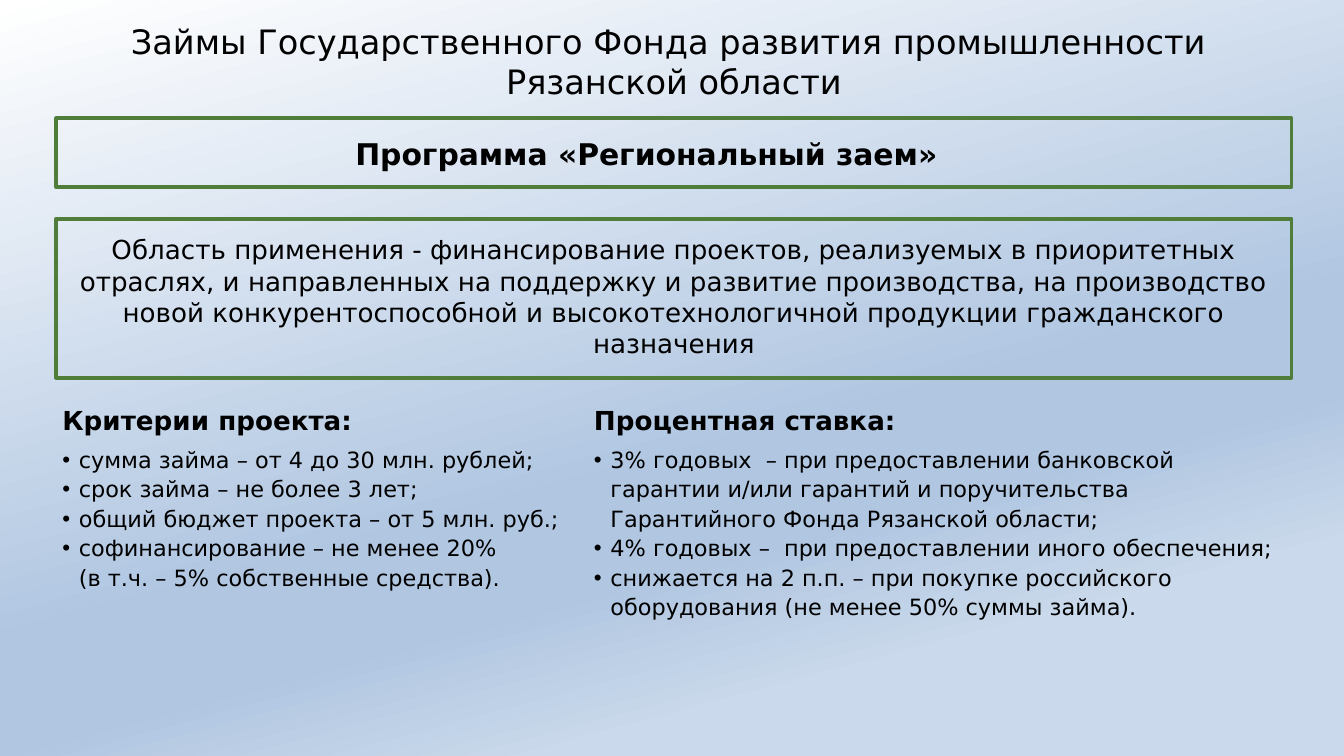
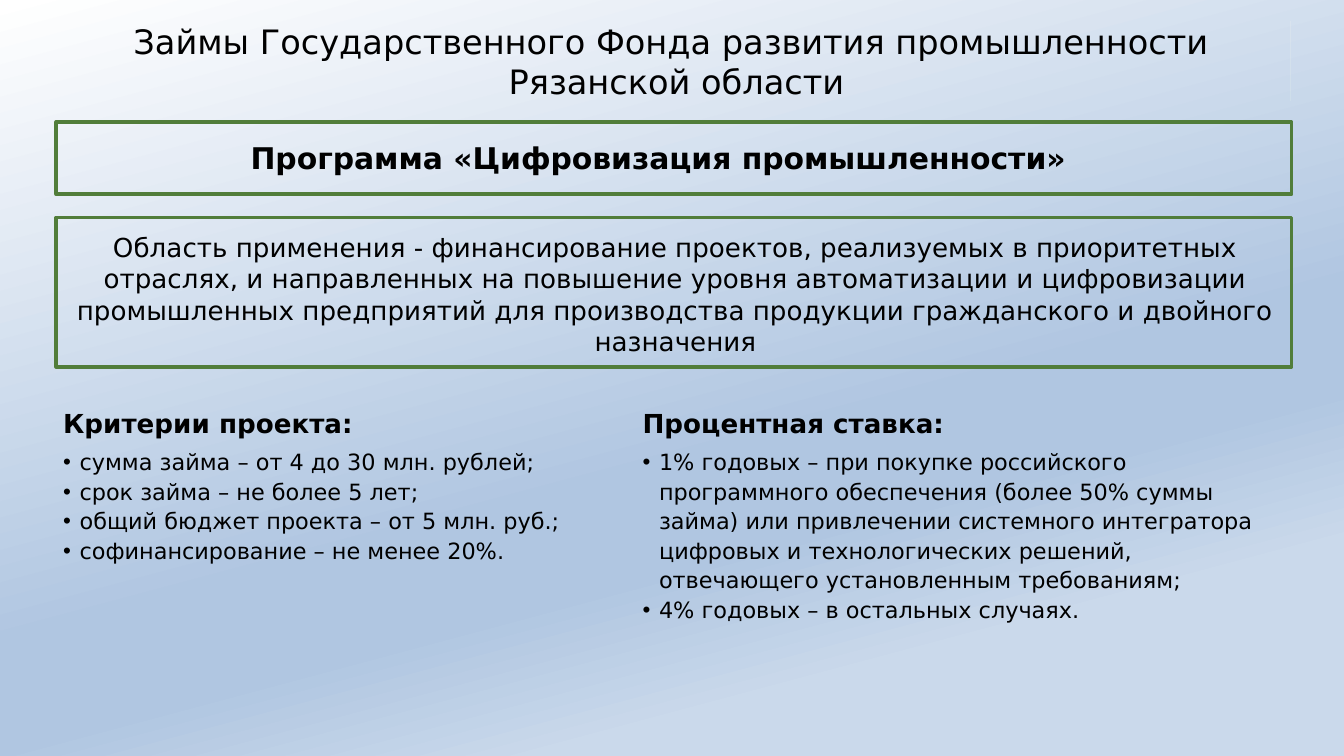
from lxml import etree
from pptx import Presentation
from pptx.dml.color import RGBColor
from pptx.enum import shapes, text
from pptx.oxml.ns import qn
from pptx.util import Pt

FONT = "DejaVu Sans"
BLACK, GREEN = "000000", "517D3A"
GRADIENT = [(0, "FFFFFF"), (58, "B0C6E1"), (67, "B0C6E1"), (81, "CAD9EB")]
GRADIENT_ANGLE = 75
FRAME_LEFT, FRAME_WIDTH = 30.2, 661.7
BULLET_INDENT = 8.85

TITLE = "Займы Государственного Фонда развития промышленности \nРязанской области"
CRITERIA, RATE = "Критерии проекта:", "Процентная ставка:"

# Boxes are (left, top, width, height); frames are (top, height).
PROGRAMS = [
    dict(
        title_left=32.4,
        name="Программа «Региональный заем»",
        name_box=(20.2, 69.1, 652.3, 26.6),
        name_frame=(63.4, 36.9),
        scope="Область применения - финансирование проектов, реализуемых в "
              "приоритетных отраслях, и направленных на поддержку и развитие "
              "производства, на производство новой конкурентоспособной и "
              "высокотехнологичной продукции гражданского назначения",
        scope_box=(30.2, 121.7, 661.7, 74.9),
        scope_frame=(117.2, 85.2),
        columns=[
            (CRITERIA, (26.2, 213.1, 289.4, 106.6), [
                "сумма займа – от 4 до 30 млн. рублей;",
                "срок займа – не более 3 лет;",
                "общий бюджет проекта – от 5 млн. руб.;",
                "софинансирование – не менее 20% \n(в т.ч. – 5% собственные средства).",
            ]),
            (RATE, (311, 213.1, 383.8, 122.4), [
                "3% годовых  – при предоставлении банковской гарантии и/или "
                "гарантий и поручительства Гарантийного Фонда Рязанской области;",
                "4% годовых –  при предоставлении иного обеспечения;",
                "снижается на 2 п.п. – при покупке российского оборудования "
                "(не менее 50% суммы займа).",
            ]),
        ],
    ),
    dict(
        title_left=33.8,
        name="Программа «Цифровизация промышленности»",
        name_box=(26.6, 71.1, 652.3, 26.6),
        name_frame=(65.3, 38.8),
        scope="Область применения - финансирование проектов, реализуемых в "
              "приоритетных отраслях, и направленных на повышение уровня "
              "автоматизации и цифровизации промышленных предприятий для "
              "производства продукции гражданского и двойного назначения",
        scope_box=(31, 120.4, 661.7, 74.9),
        scope_frame=(116.6, 80),
        columns=[
            (CRITERIA, (26.6, 214.4, 310.3, 90.7), [
                "сумма займа – от 4 до 30 млн. рублей;",
                "срок займа – не более 5 лет;",
                "общий бюджет проекта – от 5 млн. руб.;",
                "софинансирование – не менее 20%.",
            ]),
            (RATE, (337, 214.4, 355, 136.1), [
                "1% годовых – при покупке российского программного обеспечения "
                "(более 50% суммы займа) или привлечении системного интегратора "
                "цифровых и технологических решений, отвечающего установленным "
                "требованиям;",
                "4% годовых – в остальных случаях.",
            ]),
        ],
    ),
]


def rgb(value):
    return RGBColor.from_string(value)


def place(sp, box):
    sp.left, sp.top, sp.width, sp.height = map(Pt, box)


def write(p, content, size, bold=False, align=text.PP_ALIGN.CENTER):
    p.text = content
    p.alignment = align
    for r in p.runs:
        r.font.name, r.font.size, r.font.bold = FONT, Pt(size), bold
        r.font.color.rgb = rgb(BLACK)


def set_bullet(p, char=None):
    """Give the paragraph a hanging bullet, or none when char is empty."""
    indent = Pt(BULLET_INDENT) if char else 0
    pPr = p._p.get_or_add_pPr()
    pPr.set("marL", str(indent))
    pPr.set("indent", str(-indent))
    bullet = etree.SubElement(pPr, qn("a:buChar" if char else "a:buNone"))
    if char:
        bullet.set("char", char)


def paint_background(master):
    fill = master.background.fill
    fill.gradient()
    fill.gradient_angle = 360 - GRADIENT_ANGLE
    stops = next(master._element.iter(qn("a:gsLst")))
    for stop in list(stops):
        stops.remove(stop)
    for percent, color in GRADIENT:
        stop = etree.SubElement(stops, qn("a:gs"), pos=str(percent * 1000))
        etree.SubElement(stop, qn("a:srgbClr"), val=color)


def add_title(s, left):
    sp = s.shapes.title
    place(sp, (left, 11.5, 657.4, 42.5))
    sp._element.set("useBgFill", "1")
    tf = sp.text_frame
    tf.margin_left = tf.margin_top = tf.margin_right = tf.margin_bottom = 0
    tf.vertical_anchor = text.MSO_ANCHOR.MIDDLE
    tf.auto_size = text.MSO_AUTO_SIZE.NONE
    write(tf.paragraphs[0], TITLE, 18)


def add_framed_text(s, content, box, frame, size, bold=False):
    top, height = frame
    sp = s.shapes.add_shape(shapes.MSO_SHAPE.RECTANGLE, Pt(FRAME_LEFT), Pt(top),
                            Pt(FRAME_WIDTH), Pt(height))
    sp.shadow.inherit = False
    sp.fill.background()
    sp.line.color.rgb = rgb(GREEN)
    sp.line.width = Pt(2)
    tf = s.shapes.add_textbox(*map(Pt, box)).text_frame
    tf.word_wrap = True
    tf.auto_size = text.MSO_AUTO_SIZE.SHAPE_TO_FIT_TEXT
    write(tf.paragraphs[0], content, size, bold)


def fill_column(sp, heading, box, items):
    place(sp, box)
    tf = sp.text_frame
    tf.auto_size = text.MSO_AUTO_SIZE.SHAPE_TO_FIT_TEXT
    p = tf.paragraphs[0]
    write(p, heading, 14, True, text.PP_ALIGN.LEFT)
    p.space_before, p.space_after = Pt(0), Pt(4)
    set_bullet(p)
    for item in items:
        p = tf.add_paragraph()
        write(p, item, 12, align=text.PP_ALIGN.LEFT)
        p.space_before, p.line_spacing = Pt(0), 1.1
        set_bullet(p, "•")


def main():
    prs = Presentation()
    prs.slide_width, prs.slide_height = Pt(720), Pt(405)
    paint_background(prs.slide_master)
    two_columns = prs.slide_layouts.get_by_name("Two Content")
    for program in PROGRAMS:
        s = prs.slides.add_slide(two_columns)
        add_title(s, program["title_left"])
        add_framed_text(s, program["name"], program["name_box"],
                        program["name_frame"], 16, True)
        add_framed_text(s, program["scope"], program["scope_box"],
                        program["scope_frame"], 14)
        for idx, column in enumerate(program["columns"], 1):
            fill_column(s.placeholders[idx], *column)
    prs.save("out.pptx")


if __name__ == "__main__":
    main()
